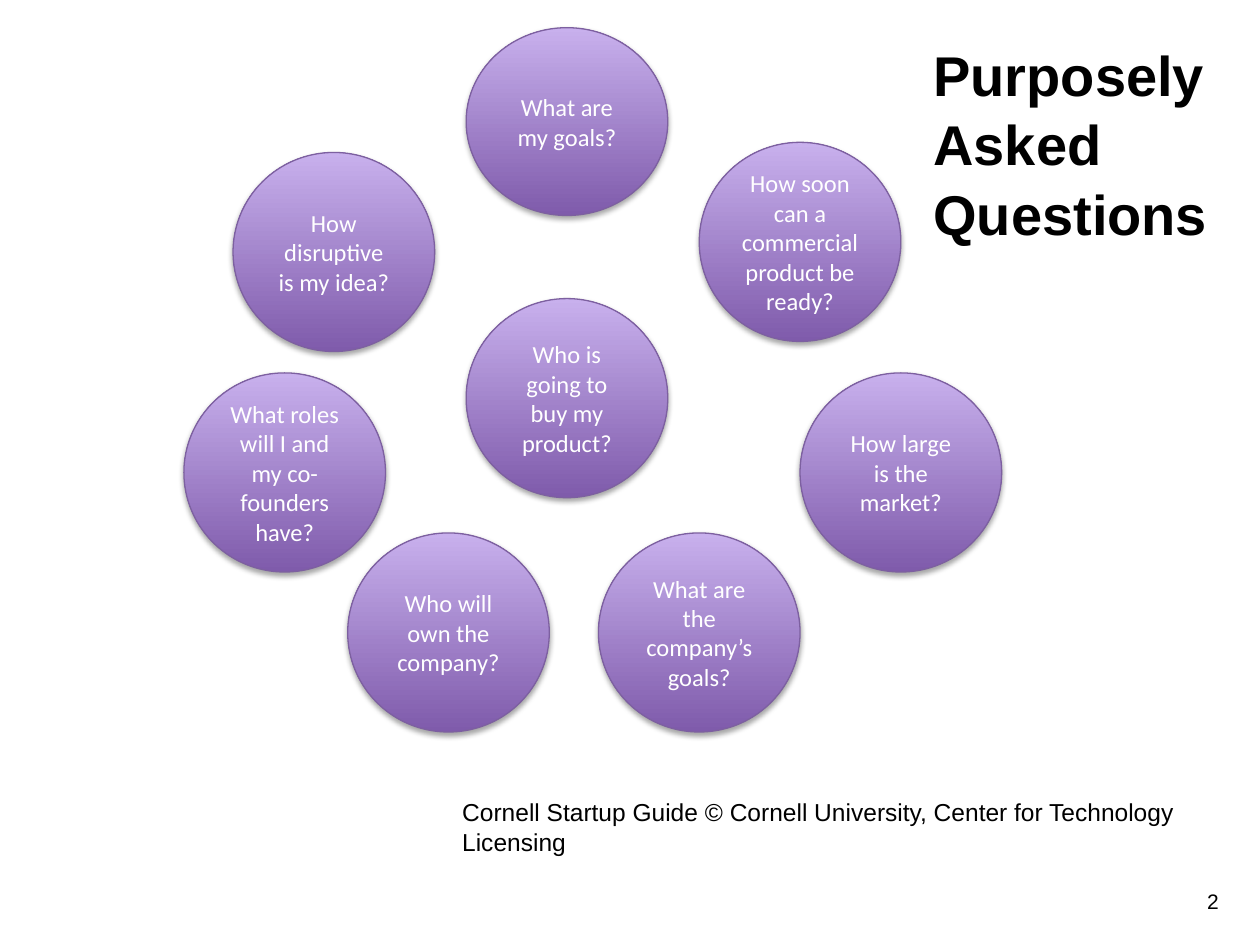
from lxml import etree
from pptx import Presentation
from pptx.dml.color import RGBColor
from pptx.enum.shapes import MSO_SHAPE
from pptx.enum.text import MSO_ANCHOR, PP_ALIGN
from pptx.oxml.ns import qn
from pptx.util import Inches, Pt

OVAL = MSO_SHAPE.OVAL
TOP, MIDDLE, BOTTOM = MSO_ANCHOR.TOP, MSO_ANCHOR.MIDDLE, MSO_ANCHOR.BOTTOM
LEFT, CENTER, RIGHT = PP_ALIGN.LEFT, PP_ALIGN.CENTER, PP_ALIGN.RIGHT
BLACK = RGBColor(0x00, 0x00, 0x00)
WHITE = RGBColor(0xFF, 0xFF, 0xFF)
DARK = RGBColor(0x7F, 0x5B, 0xAB)
LIGHT = RGBColor(0xC8, 0xB0, 0xED)
EDGE = RGBColor(0x7D, 0x60, 0xA0)

deck = Presentation()
deck.slide_width, deck.slide_height = Inches(10), Inches(7.5)
slide = deck.slides.add_slide(deck.slide_layouts[6])

# Grid of 100 columns by 75 rows
COL = deck.slide_width / 100
ROW = deck.slide_height / 75


def place(x, y, w, h):
    return int(x * COL), int(y * ROW), int(w * COL), int(h * ROW)


def write(shape, text, face, size, color, align, anchor):
    frame = shape.text_frame
    frame.text = text
    frame.word_wrap = True
    frame.vertical_anchor = anchor
    para = frame.paragraphs[0]
    para.alignment = align
    font = para.runs[0].font
    font.name, font.size, font.color.rgb = face, Pt(size), color
    return para


# Title, credit line and page number
title = slide.shapes.add_textbox(*place(73.1, 3.2, 25.4, 16.9))
head = write(title, "Purposely Asked Questions", "Arial", 32, BLACK, LEFT, BOTTOM)
head.runs[0].font.bold = True
head.line_spacing = 1.04

credit = slide.shapes.add_textbox(*place(35.7, 62.8, 60, 5.3))
write(credit, "Cornell Startup Guide © Cornell University, Center for Technology Licensing",
      "Arial", 14, BLACK, LEFT, TOP)

page = slide.shapes.add_textbox(*place(91.2, 69.5, 6.5, 4))
write(page, "2", "Arial", 12, BLACK, RIGHT, MIDDLE)

# Question circles: text, left column, top row, height in rows
WIDE, TALL = 16, 15.8
ASKS = [
    ("What are my goals?", 37, 2.2, 14.9),
    ("How soon can a commercial product be ready?", 55.5, 11.3, TALL),
    ("How large is the market?", 63.5, 29.6, TALL),
    ("What are the company’s goals?", 47.5, 42.3, TALL),
    ("Who will own the company?", 27.6, 42.3, TALL),
    ("What roles will I and my co-founders have?", 14.6, 29.6, TALL),
    ("How disruptive is my idea?", 18.5, 12.1, TALL),
    ("Who is going to buy my product?", 37, 23.7, TALL),
]
for ask, x, y, high in ASKS:
    ball = slide.shapes.add_shape(OVAL, *place(x, y, WIDE, high))
    ball.fill.gradient()
    ball.fill.gradient_angle = 90
    for stop, tone in zip(ball.fill.gradient_stops, (DARK, LIGHT)):
        stop.color.rgb = tone
    ball.line.color.rgb = EDGE
    ball.line.width = Pt(0.75)

    # Soft shadow straight below
    ball.shadow.inherit = False
    glow = ball.element.spPr.find(qn("a:effectLst"))
    shade = etree.SubElement(glow, qn("a:outerShdw"), blurRad=str(Pt(3.1)),
                             dist=str(Pt(1.8)), dir="5400000", rotWithShape="0")
    ink = etree.SubElement(shade, qn("a:srgbClr"), val=str(BLACK))
    etree.SubElement(ink, qn("a:alpha"), val="35000")

    write(ball, ask, "Calibri", 14, WHITE, CENTER, MIDDLE)

deck.save("out.pptx")
